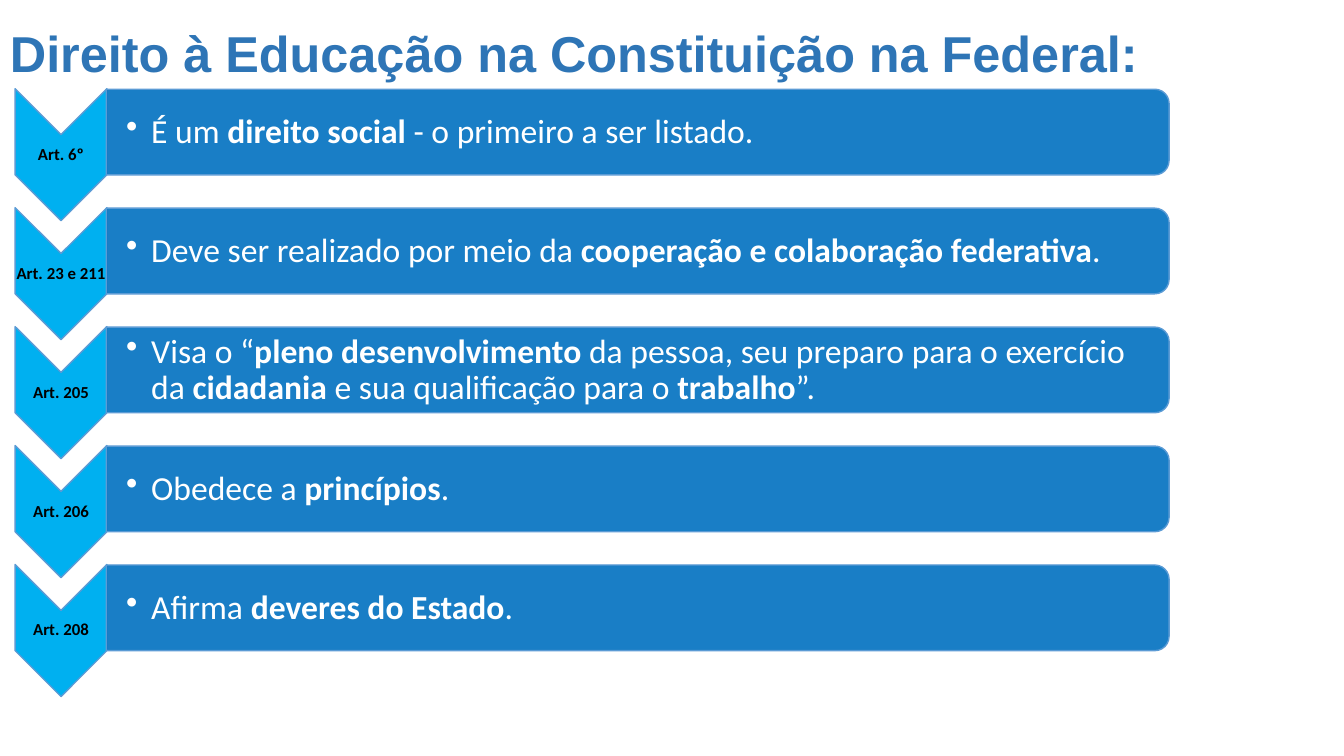
from dataclasses import dataclass

from lxml.etree import SubElement
from pptx import Presentation
from pptx.dml.color import RGBColor
from pptx.enum.shapes import MSO_SHAPE as Preset
from pptx.enum.text import MSO_ANCHOR as Anchor, PP_ALIGN as Align
from pptx.oxml.ns import qn
from pptx.shapes.autoshape import Shape
from pptx.slide import Slide
from pptx.text.text import _Paragraph as Paragraph
from pptx.util import Inches, Pt

ROW_PITCH = 1.18
TITLE_FORMAT = {"name": "Arial", "size": Pt(36), "bold": True}
LABEL_FORMAT = {"name": "Calibri", "size": Pt(12), "bold": True}
BODY_FORMAT = {"name": "Calibri", "size": Pt(24)}


@dataclass
class Article:
    label: str
    body: str  # bold parts stand between bars


ARTICLES = [
    Article("Art. 6º", "É um |direito social |- o primeiro a ser listado."),
    Article("Art. 23 e 211",
            "Deve ser realizado por meio da |cooperação e colaboração federativa|."),
    Article("Art. 205",
            "Visa o “|pleno desenvolvimento |da pessoa, seu preparo para o exercício da "
            "|cidadania| e sua qualificação para o |trabalho|”."),
    Article("Art. 206", "Obedece a |princípios|."),
    Article("Art. 208", "Afirma |deveres do Estado|."),
]


def color(value: str) -> RGBColor:
    return RGBColor.from_string(value)


def add_turned_shape(page: Slide, preset: Preset, left: float, top: float,
                     width: float, height: float, fill: str) -> Shape:
    """Add a preset shape turned a quarter clockwise."""
    shape = page.shapes.add_shape(
        preset, Inches(left), Inches(top), Inches(width), Inches(height))
    shape.rotation = 90
    shape.shadow.inherit = False
    shape.fill.solid()
    shape.fill.fore_color.rgb = color(fill)
    shape.line.color.rgb = color("5B9BD5")
    shape.line.width = Pt(1)
    return shape


def set_opacity(shape: Shape, percent: int) -> None:
    tint = shape.fill._xPr.find(qn("a:solidFill"))[0]
    SubElement(tint, qn("a:alpha"), val=str(percent * 1000))


def add_bullet(para: Paragraph) -> None:
    properties = para._p.get_or_add_pPr()
    properties.set("marL", str(Inches(0.25)))
    properties.set("indent", str(-Inches(0.25)))
    SubElement(properties, qn("a:buChar"), char="•")


def add_text(page: Slide, text: str, left: float, top: float, width: float,
             height: float, text_format: dict, fill: str, insets: dict,
             align: Align = Align.LEFT, bullet: bool = False,
             wrap: bool = True) -> None:
    box = page.shapes.add_textbox(
        Inches(left), Inches(top), Inches(width), Inches(height))
    frame = box.text_frame
    frame.word_wrap = wrap
    frame.vertical_anchor = Anchor.MIDDLE
    for side, inset in insets.items():
        setattr(frame, f"margin_{side}", Inches(inset))
    para = frame.paragraphs[0]
    para.alignment = align
    para.line_spacing = 0.9
    if bullet:
        add_bullet(para)
    for index, part in enumerate(text.split("|")):
        span = para.add_run()
        span.text = part
        settings = {"bold": index % 2 == 1} | text_format
        for name, value in settings.items():
            setattr(span.font, name, value)
        span.font.color.rgb = color(fill)


def add_article(page: Slide, article: Article, offset: float) -> None:
    """Draw one chevron and its bar, moved down by the offset."""
    label_insets = dict.fromkeys(("left", "top", "right", "bottom"), 0.01)
    body_insets = {"left": 0.19, "top": 0.02, "right": 0.02, "bottom": 0.02}
    add_turned_shape(page, Preset.CHEVRON, -0.05, 1.08 + offset, 1.31, 0.91, "00B0F0")
    add_text(page, article.label, 0.15, 1.34 + offset, 0.91, 0.39,
             LABEL_FORMAT, "000000", label_insets, Align.CENTER, wrap=False)
    bar = add_turned_shape(page, Preset.ROUND_2_SAME_RECTANGLE,
                           5.9, -3.96 + offset, 0.85, 10.54, "0070C0")
    set_opacity(bar, 90)
    add_text(page, article.body, 1.06, 0.93 + offset, 10.49, 0.77,
             BODY_FORMAT, "FFFFFF", body_insets, bullet=True)


def main() -> None:
    deck = Presentation()
    deck.slide_width, deck.slide_height = Inches(13.33), Inches(7.5)
    page = deck.slides.add_slide(deck.slide_layouts[6])
    add_text(page, "Direito à Educação na Constituição na Federal:",
             0, 0, 11.6, 1.12, TITLE_FORMAT, "2E75B6", {})
    for row, article in enumerate(ARTICLES):
        add_article(page, article, row * ROW_PITCH)
    deck.save("out.pptx")


if __name__ == "__main__":
    main()
